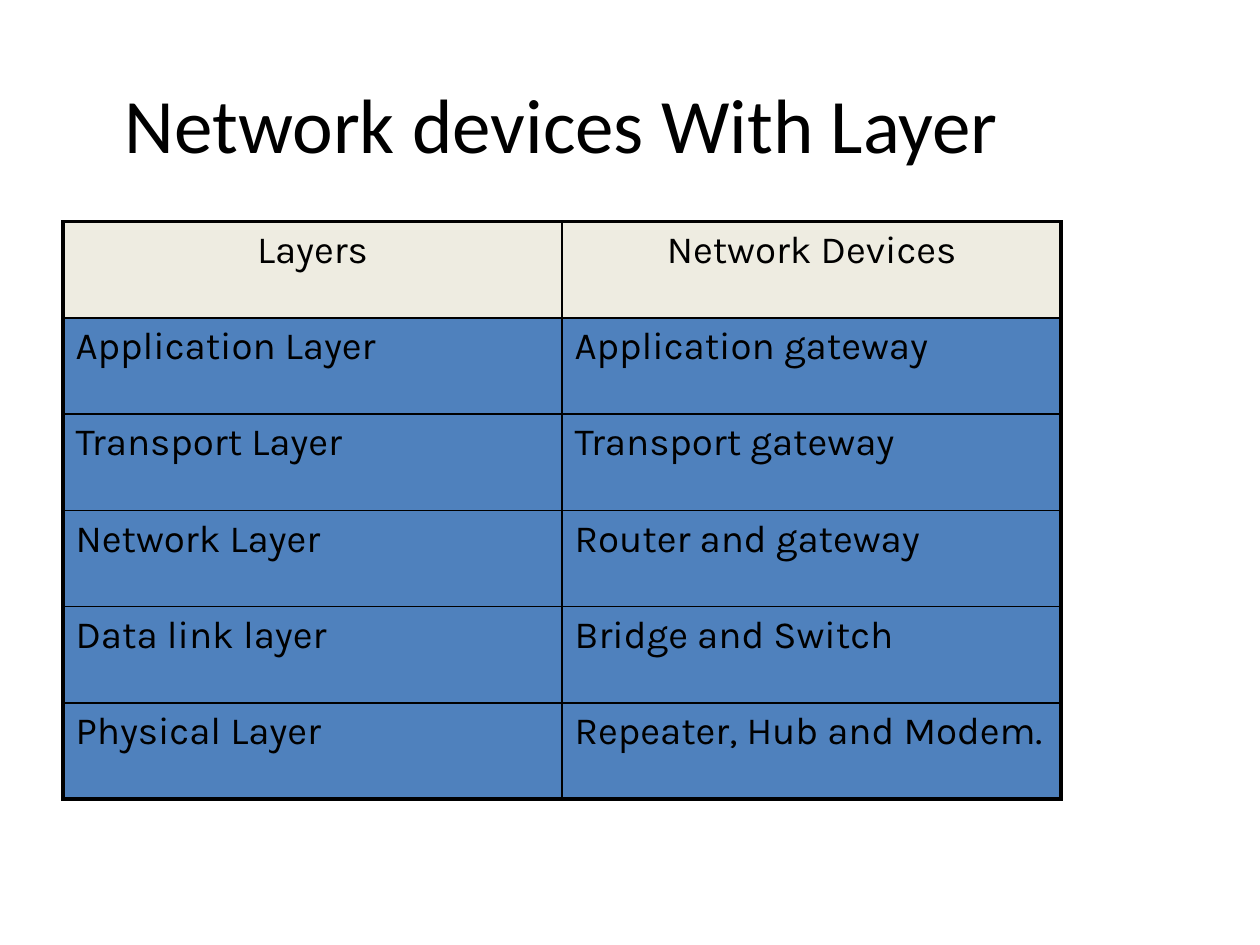
from dataclasses import dataclass

from lxml.etree import fromstring
from pptx import Presentation
from pptx.dml.color import RGBColor
from pptx.enum.text import MSO_ANCHOR, PP_ALIGN
from pptx.util import Cm, Pt

NS = "http://schemas.openxmlformats.org/drawingml/2006/main"


@dataclass(frozen=True)
class Theme:
    ink: str = "000000"
    head: str = "EEECE1"
    body: str = "4F81BD"
    title_font: str = "Calibri"
    cell_font: str = "Karla"
    title_size: float = 44
    cell_size: float = 22
    space: float = 6
    thin: float = 1
    thick: float = 2.25


THEME = Theme()

ROWS = [
    ("Layers", "Network Devices"),
    ("Application Layer", "Application gateway"),
    ("Transport Layer", "Transport gateway"),
    ("Network Layer", "Router and gateway"),
    ("Data link layer", "Bridge and Switch"),
    ("Physical Layer", "Repeater, Hub and Modem."),
]


def add_run(para, text, font, size):
    run = para.add_run()
    run.text = text
    run.font.name = font
    run.font.size = Pt(size)
    run.font.color.rgb = RGBColor.from_string(THEME.ink)


def set_edges(cell, outer):
    """Rule the four sides of a cell, thick on the sides named in outer."""
    props = cell._tc.get_or_add_tcPr()
    for place, side in enumerate("LRTB"):
        width = Pt(THEME.thick if side in outer else THEME.thin)
        props.insert(place, fromstring(
            f'<a:ln{side} xmlns:a="{NS}" w="{width}"><a:solidFill>'
            f'<a:srgbClr val="{THEME.ink}"/></a:solidFill></a:ln{side}>'))


def set_title(slide, box, text):
    title = slide.shapes.title
    title.left, title.top, title.width, title.height = box
    frame = title.text_frame
    frame.word_wrap = True
    frame.vertical_anchor = MSO_ANCHOR.MIDDLE
    para = frame.paragraphs[0]
    para.alignment = PP_ALIGN.CENTER
    add_run(para, text, THEME.title_font, THEME.title_size)


def fill_cell(cell, text, is_head, outer):
    cell.fill.solid()
    cell.fill.fore_color.rgb = RGBColor.from_string(
        THEME.head if is_head else THEME.body)
    para = cell.text_frame.paragraphs[0]
    para.alignment = PP_ALIGN.CENTER if is_head else PP_ALIGN.LEFT
    para.space_before = Pt(THEME.space)
    add_run(para, text, THEME.cell_font, THEME.cell_size)
    set_edges(cell, outer)


def add_grid(slide, box, rows):
    last, end = len(rows) - 1, len(rows[0]) - 1
    table = slide.shapes.add_table(last + 1, end + 1, *box).table
    for i, row in enumerate(rows):
        for j, text in enumerate(row):
            sides = {"L": j == 0, "R": j == end, "T": i == 0, "B": i == last}
            outer = [side for side, edge in sides.items() if edge]
            fill_cell(table.cell(i, j), text, i == 0, outer)


def main():
    deck = Presentation()
    deck.slide_width, deck.slide_height = Cm(25.4), Cm(19.05)
    slide = deck.slides.add_slide(deck.slide_layouts.get_by_name("Title Only"))
    left, width = Cm(1.27), Cm(20.12)
    set_title(slide, (left, Cm(0.89), width, Cm(3.18)),
              "Network devices With Layer")
    add_grid(slide, (left, Cm(4.47), width, Cm(11.64)), ROWS)
    deck.save("out.pptx")


if __name__ == "__main__":
    main()
